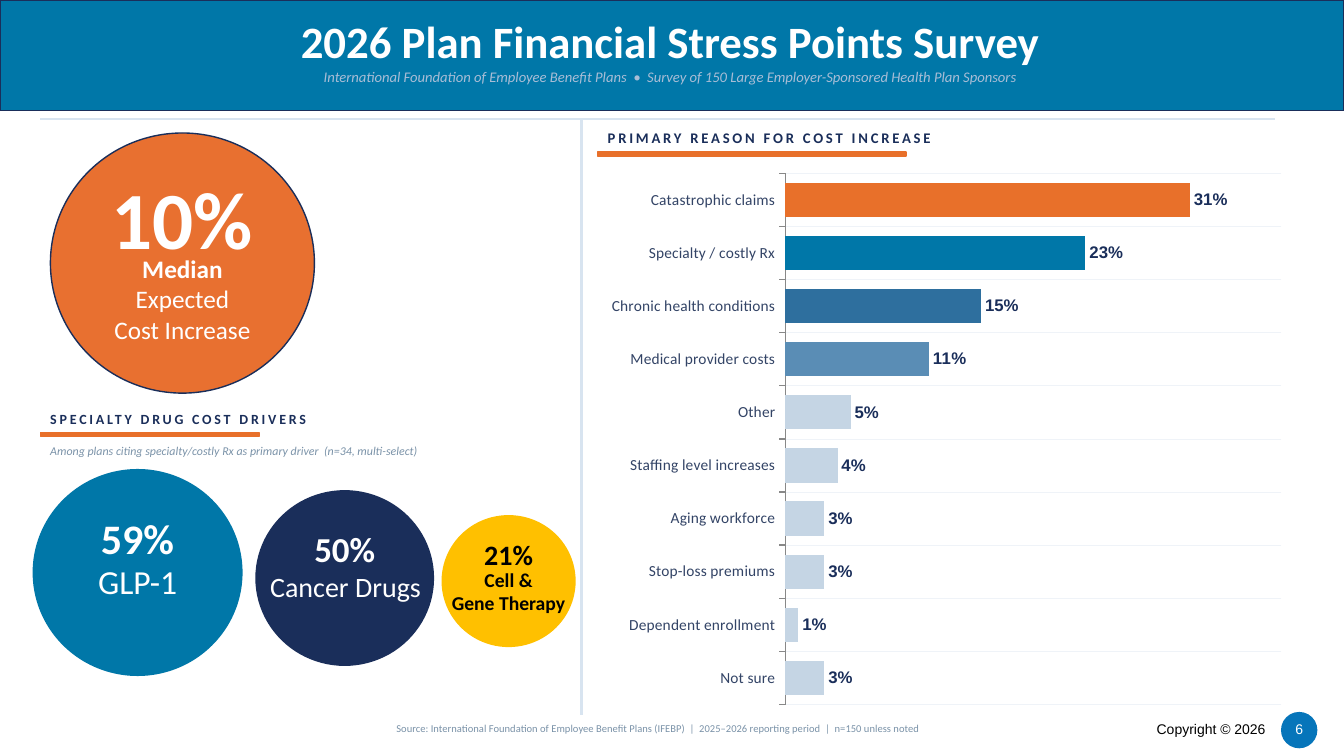
from dataclasses import dataclass

import pptx
import pptx.chart.data
import pptx.dml.color
import pptx.enum.chart
import pptx.enum.shapes
import pptx.enum.text
import pptx.oxml
import pptx.shapes.autoshape
import pptx.slide
import pptx.text.text
import pptx.util

Pt = pptx.util.Pt
Align = pptx.enum.text.PP_ALIGN
Preset = pptx.enum.shapes.MSO_SHAPE

COLORS = {
    "white": "FFFFFF", "black": "000000", "blue": "0077A8", "navy": "1A2E5A",
    "orange": "E87030", "accent": "E8702A", "yellow": "FFC000", "badge": "0675BA",
    "subtitle": "A8BDD6", "muted": "7A92A8", "rule": "D8E4F0", "category": "334466",
    "axis": "888888", "grid": "EFF3F8", "steel": "2E6F9E", "sky": "5A8DB5", "pale": "C5D5E4",
}


@dataclass(frozen=True)
class Box:
    left: float
    top: float
    width: float
    height: float


@dataclass(frozen=True)
class Label:
    text: str
    box: Box
    size: float
    color: str = "white"
    bold: bool = False
    italic: bool = False
    align: Align = Align.CENTER
    font: str = "Calibri"
    spacing: int = 0
    wrap: bool = True


@dataclass(frozen=True)
class Panel:
    preset: Preset
    box: Box
    fill: str
    line: str | None = None


@dataclass(frozen=True)
class Rule:
    start: tuple[float, float]
    end: tuple[float, float]
    width: float


@dataclass(frozen=True)
class Reason:
    name: str
    percent: int
    color: str = "pale"


TITLE = Label("2026 Plan Financial Stress Points Survey", Box(32.4, 6.5, 893, 44.6), 32, bold=True)
BANNER = Panel(Preset.RECTANGLE, Box(0, 0, 960, 79), "blue", "navy")
PANELS = [
    Panel(Preset.OVAL, Box(36, 95, 188.6, 185.8), "orange", "navy"),
    Panel(Preset.RECTANGLE, Box(28.8, 308.9, 156.2, 2.9), "accent", "accent"),
    Panel(Preset.OVAL, Box(23.8, 335.5, 149, 146.9), "blue", "blue"),
    Panel(Preset.OVAL, Box(182.9, 350.6, 126.7, 124.6), "navy", "navy"),
    Panel(Preset.OVAL, Box(315.4, 367.9, 95.8, 94.3), "yellow"),
    Panel(Preset.RECTANGLE, Box(427, 108.7, 220.3, 2.9), "accent", "accent"),
    Panel(Preset.OVAL, Box(915, 508.5, 26, 26), "badge"),
]
RULES = [Rule((28.8, 85), (911, 85), 1), Rule((415.4, 85), (415.4, 510.5), 1.5)]
MEDIAN = Label("Median\nExpected\nCost Increase", Box(36, 195, 188.6, 36.7), 18, bold=True)
LABELS = [
    Label("International Foundation of Employee Benefit Plans  •  "
          "Survey of 150 Large Employer-Sponsored Health Plan Sponsors",
          Box(32.4, 45.4, 893, 18.7), 10.5, "subtitle", italic=True),
    Label("10%", Box(36, 116.6, 188.6, 77), 58, bold=True),
    Label("SPECIALTY DRUG COST DRIVERS", Box(28.8, 289.4, 370, 19.4), 10, "navy",
          bold=True, align=Align.LEFT, spacing=200),
    Label("Among plans citing specialty/costly Rx as primary driver  (n=34, multi-select)",
          Box(28.8, 313.2, 355.7, 17.3), 8.5, "muted", italic=True, align=Align.LEFT),
    Label("59%", Box(23.8, 358.6, 149, 50.4), 30, bold=True),
    Label("GLP-1", Box(23.8, 405.4, 149, 18.7), 24),
    Label("50%", Box(182.9, 370.8, 126.7, 41.8), 25, bold=True),
    Label("Cancer Drugs", Box(176.4, 409.7, 141, 18), 20),
    Label("21%", Box(315.4, 378, 95.8, 35.3), 20, "black", bold=True),
    Label("Cell &\nGene Therapy", Box(304.6, 409, 117.4, 26.6), 14, "black", bold=True),
    Label("PRIMARY REASON FOR COST INCREASE", Box(427, 87.8, 498, 20.9), 10.5, "navy",
          bold=True, align=Align.LEFT, spacing=200),
    Label("Source: International Foundation of Employee Benefit Plans (IFEBP)  |  "
          "2025–2026 reporting period  |  n=150 unless noted",
          Box(28.8, 513.4, 882, 13.7), 7.5, "muted"),
    Label("Copyright © 2026", Box(643, 511.2, 268, 19.4), 10, "black",
          align=Align.RIGHT, font="Arial"),
    Label("6", Box(918, 511.2, 20, 19.4), 10, font="Arial", wrap=False),
]
REASONS = [
    Reason("Not sure", 3),
    Reason("Dependent enrollment", 1),
    Reason("Stop-loss premiums", 3),
    Reason("Aging workforce", 3),
    Reason("Staffing level increases", 4),
    Reason("Other", 5),
    Reason("Medical provider costs", 11, "sky"),
    Reason("Chronic health conditions", 15, "steel"),
    Reason("Specialty / costly Rx", 23, "blue"),
    Reason("Catastrophic claims", 31, "accent"),
]
CHART_BOX = Box(427, 115.9, 498.2, 395.3)


def rgb(name: str) -> pptx.dml.color.RGBColor:
    return pptx.dml.color.RGBColor.from_string(COLORS[name])


def points(box: Box) -> tuple[pptx.util.Length, ...]:
    return Pt(box.left), Pt(box.top), Pt(box.width), Pt(box.height)


def set_font(font: pptx.text.text.Font, name: str, size: float, color: str,
             bold: bool = False, italic: bool = False) -> None:
    font.name, font.size, font.bold, font.italic = name, Pt(size), bold, italic
    font.color.rgb = rgb(color)


def write_label(frame: pptx.text.text.TextFrame, label: Label) -> None:
    frame.text = label.text
    frame.word_wrap = label.wrap
    frame.auto_size = pptx.enum.text.MSO_AUTO_SIZE.NONE
    frame.vertical_anchor = pptx.enum.text.MSO_ANCHOR.MIDDLE
    for paragraph in frame.paragraphs:
        paragraph.alignment = label.align
        set_font(paragraph.font, label.font, label.size, label.color, label.bold, label.italic)
        if label.spacing:
            for run in paragraph.runs:
                run._r.get_or_add_rPr().set("spc", str(label.spacing))


def add_label(slide: pptx.slide.Slide, label: Label) -> pptx.text.text.TextFrame:
    frame = slide.shapes.add_textbox(*points(label.box)).text_frame
    write_label(frame, label)
    return frame


def add_panel(slide: pptx.slide.Slide, panel: Panel) -> pptx.shapes.autoshape.Shape:
    shape = slide.shapes.add_shape(panel.preset, *points(panel.box))
    shape.shadow.inherit = False
    shape.fill.solid()
    shape.fill.fore_color.rgb = rgb(panel.fill)
    if panel.line:
        shape.line.color.rgb = rgb(panel.line)
        shape.line.width = Pt(1)
    else:
        shape.line.fill.background()
    return shape


def add_rule(slide: pptx.slide.Slide, rule: Rule) -> None:
    connector = slide.shapes.add_connector(
        pptx.enum.shapes.MSO_CONNECTOR.STRAIGHT, *map(Pt, rule.start + rule.end))
    connector.line.color.rgb = rgb("rule")
    connector.line.width = Pt(rule.width)
    connector.element.spPr.append(pptx.oxml.parse_xml(
        '<a:effectLst xmlns:a="http://schemas.openxmlformats.org/drawingml/2006/main"/>'))


def add_title(slide: pptx.slide.Slide) -> None:
    """Place the title placeholder in front of its banner."""
    title = slide.shapes.title
    title.left, title.top, title.width, title.height = points(TITLE.box)
    write_label(title.text_frame, TITLE)
    title.element.addprevious(add_panel(slide, BANNER).element)


def add_reason_chart(slide: pptx.slide.Slide) -> None:
    data = pptx.chart.data.CategoryChartData()
    data.categories = [reason.name for reason in REASONS]
    data.add_series("Series 1", [reason.percent for reason in REASONS])
    chart = slide.shapes.add_chart(
        pptx.enum.chart.XL_CHART_TYPE.BAR_CLUSTERED, *points(CHART_BOX), data).chart
    chart.has_legend = chart.has_title = False
    set_font(chart.font, "Arial", 10, "black")

    value_axis = chart.value_axis
    value_axis.minimum_scale, value_axis.maximum_scale = 0, 38
    value_axis.has_major_gridlines = value_axis.visible = False

    category_axis = chart.category_axis
    set_font(category_axis.tick_labels.font, "Calibri", 11, "category")
    category_axis.major_tick_mark = pptx.enum.chart.XL_TICK_MARK.OUTSIDE
    category_axis.has_major_gridlines = True
    for line, color, width in ((category_axis.format.line, "axis", 1),
                               (category_axis.major_gridlines.format.line, "grid", 0.5)):
        line.color.rgb = rgb(color)
        line.width = Pt(width)

    plot = chart.plots[0]
    plot.gap_width = 55
    plot.vary_by_categories = False
    series = plot.series[0]
    for index, reason in enumerate(REASONS):
        fill = series.points[index].format.fill
        fill.solid()
        fill.fore_color.rgb = rgb(reason.color)
    labels = series.data_labels
    labels.show_value = True
    labels.number_format, labels.number_format_is_linked = '0"%"', False
    labels.position = pptx.enum.chart.XL_LABEL_POSITION.OUTSIDE_END
    set_font(labels.font, "Arial", 12, "navy", bold=True)


def main() -> None:
    presentation = pptx.Presentation()
    presentation.slide_width, presentation.slide_height = Pt(960), Pt(540)
    slide = presentation.slides.add_slide(presentation.slide_layouts.get_by_name("Title Only"))
    add_title(slide)
    for rule in RULES:
        add_rule(slide, rule)
    for panel in PANELS:
        add_panel(slide, panel)
    for label in LABELS:
        add_label(slide, label)
    for paragraph in add_label(slide, MEDIAN).paragraphs[1:]:
        paragraph.font.bold = False
    add_reason_chart(slide)
    presentation.save("out.pptx")


if __name__ == "__main__":
    main()
